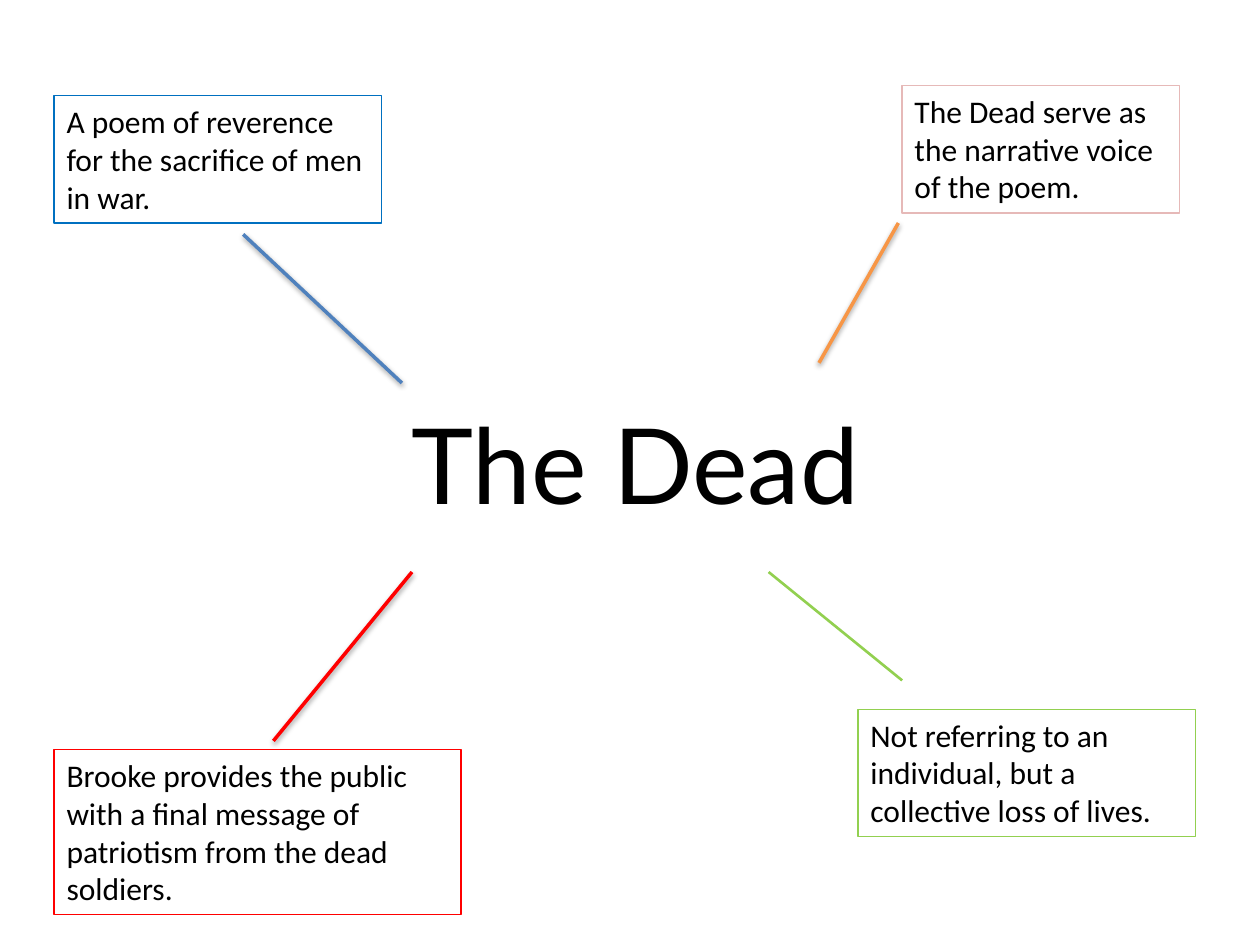
from lxml import etree
from pptx import Presentation
from pptx.dml.color import RGBColor
from pptx.enum.shapes import MSO_CONNECTOR
from pptx.enum.text import MSO_AUTO_SIZE, PP_ALIGN
from pptx.oxml.ns import qn
from pptx.util import Inches, Pt

COLORS = {
    "text": "000000",
    "shadow": "000000",
    "line_blue": "4F81BD",
    "box_blue": "0070C0",
    "orange": "F79646",
    "pink": "E6B9B8",
    "red": "FF0000",
    "green": "92D050",
}

# Each note: text, box, box colour, line start, line end, line colour, width, shadow
NOTES = [
    ("A poem of reverence for the sacrifice of men in war.",
     (0.43, 0.76, 2.6, 1.01), "box_blue",
     (3.19, 3.04), (1.93, 1.86), "line_blue", 2, True),
    ("The Dead serve as the narrative voice of the poem.",
     (7.16, 0.68, 2.2, 1.01), "pink",
     (6.5, 2.88), (7.13, 1.77), "orange", 2, True),
    ("Brooke provides the public with a final message of patriotism "
     "from the dead soldiers.",
     (0.43, 5.95, 3.23, 1.31), "red",
     (3.27, 4.54), (2.17, 5.88), "red", 2, True),
    ("Not referring to an individual, but a collective loss of lives.",
     (6.81, 5.63, 2.68, 1.01), "green",
     (6.1, 4.54), (7.16, 5.4), "green", 1.5, False),
]


def color(name):
    return RGBColor.from_string(COLORS[name])


def add_text(slide, box, text, size, font, align=PP_ALIGN.LEFT):
    sp = slide.shapes.add_textbox(*(Inches(v) for v in box))
    tf = sp.text_frame
    tf.word_wrap = True
    tf.auto_size = MSO_AUTO_SIZE.SHAPE_TO_FIT_TEXT
    p = tf.paragraphs[0]
    p.alignment = align
    r = p.add_run()
    r.text = text
    r.font.size = Pt(size)
    r.font.name = font
    r.font.color.rgb = color("text")
    return sp


def add_note(slide, box, text, border):
    sp = add_text(slide, box, text, 18, "Calibri")
    sp.line.color.rgb = color(border)
    sp.line.width = Pt(0.75)


def add_spoke(slide, start, end, line_color, width, shadow):
    points = (Inches(v) for v in start + end)
    line = slide.shapes.add_connector(MSO_CONNECTOR.STRAIGHT, *points)
    line.line.color.rgb = color(line_color)
    line.line.width = Pt(width)
    # An empty effect list removes the theme shadow
    effects = etree.SubElement(line._element.spPr, qn("a:effectLst"))
    if shadow:
        outer = etree.SubElement(
            effects, qn("a:outerShdw"), blurRad=str(Pt(3.1)),
            dist=str(Pt(1.6)), dir="5400000", rotWithShape="0")
        clr = etree.SubElement(outer, qn("a:srgbClr"), val=COLORS["shadow"])
        etree.SubElement(clr, qn("a:alpha"), val="38000")


def build_mind_map(slide):
    # Central topic
    add_text(slide, (1.38, 3.12, 7.32, 1.11), "The Dead", 60, "Lato",
             PP_ALIGN.CENTER)
    # Spokes and their notes
    for text, box, border, start, end, line_color, width, shadow in NOTES:
        add_spoke(slide, start, end, line_color, width, shadow)
        add_note(slide, box, text, border)


def main():
    prs = Presentation()
    prs.slide_width, prs.slide_height = Inches(10), Inches(7.5)
    build_mind_map(prs.slides.add_slide(prs.slide_layouts[6]))
    prs.save("out.pptx")


if __name__ == "__main__":
    main()
